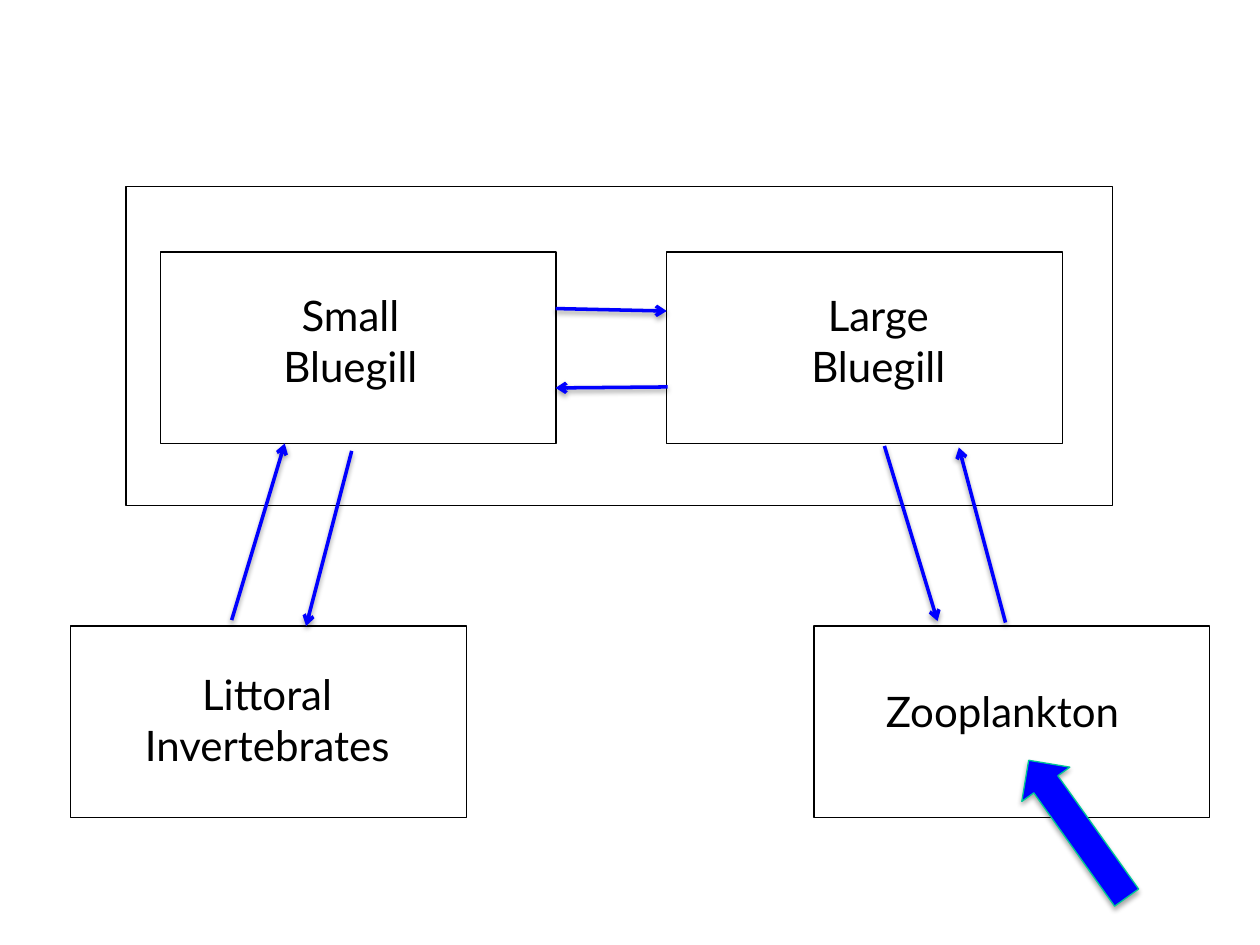
from lxml import etree
from pptx import Presentation, util as u
from pptx.dml.color import RGBColor
from pptx.enum import shapes as kinds, text as txt
from pptx.oxml.ns import qn

THEME = {
    "font": "Lato", "size": u.Pt(24), "ink": RGBColor(0, 0, 0),
    "flow": RGBColor(0, 0, 255), "edge": RGBColor(0, 200, 150),
    "thin": u.Pt(0.75), "thick": u.Pt(2),
}

# Content, in centimetres
HABITAT = (2.54, 3.76, 19.89, 6.43)
BOX_SIZE = (7.98, 3.86)
POOLS = [  # label, box corner, label frame
    ("Small Bluegill", (3.23, 5.08), (4.45, 5.72, 5.23, 2.31)),
    ("Large Bluegill", (13.44, 5.08), (15.09, 5.72, 5.23, 2.31)),
    ("Littoral Invertebrates", (1.42, 12.62), (2.11, 13.36, 6.55, 2.31)),
    ("Zooplankton", (16.41, 12.62), (17.35, 13.69, 5.72, 1.27)),
]
FLOWS = [  # from x, y, to x, y
    (11.2, 6.22, 13.44, 6.27),   # small to large
    (13.46, 7.8, 11.2, 7.82),    # large to small
    (4.67, 12.5, 5.74, 8.94),    # invertebrates to small
    (7.09, 9.09, 6.17, 12.62),   # small to invertebrates
    (17.83, 8.99, 18.9, 12.52),  # large to zooplankton
    (20.27, 12.55, 19.33, 9.02), # zooplankton to large
]
INPUT_ARROW = (21.13, 15.01, 1.19, 3.4)
INPUT_ROTATION = 324.5


def cm(lengths):
    return [u.Cm(length) for length in lengths]


def apply(target, **formats):
    for name, value in formats.items():
        setattr(target, name, value)


def outline(part, color, width):
    part.line.color.rgb = color
    part.line.width = width


def add_shadow(part, distance, opacity):
    effects = etree.SubElement(part._element.spPr, qn("a:effectLst"))
    shade = etree.SubElement(effects, qn("a:outerShdw"), blurRad=str(u.Pt(3.1)),
                             dist=str(u.Pt(distance)), dir="5400000", rotWithShape="0")
    black = etree.SubElement(shade, qn("a:srgbClr"), val="000000")
    etree.SubElement(black, qn("a:alpha"), val=str(opacity * 1000))


def add_frame(parent, place):
    frame = parent.add_shape(kinds.MSO_SHAPE.RECTANGLE, *cm(place))
    frame.shadow.inherit = False
    frame.fill.background()
    outline(frame, THEME["ink"], THEME["thin"])


def add_pool(parent, label, corner, label_place):
    pool = parent.add_group_shape().shapes
    add_frame(pool, corner + BOX_SIZE)
    caption = pool.add_textbox(*cm(label_place)).text_frame
    apply(caption, word_wrap=True, auto_size=txt.MSO_AUTO_SIZE.SHAPE_TO_FIT_TEXT)
    line = caption.paragraphs[0]
    line.alignment = txt.PP_ALIGN.CENTER
    run = line.add_run()
    run.text = label
    apply(run.font, name=THEME["font"], size=THEME["size"])
    run.font.color.rgb = THEME["ink"]


def add_flow(parent, ends):
    flow = parent.add_connector(kinds.MSO_CONNECTOR.STRAIGHT, *cm(ends))
    outline(flow, THEME["flow"], THEME["thick"])
    etree.SubElement(flow.line._get_or_add_ln(), qn("a:tailEnd"), type="arrow")
    add_shadow(flow, 1.6, 38)


def main():
    deck = Presentation()
    apply(deck, slide_width=u.Cm(25.4), slide_height=u.Cm(19.05))
    web = deck.slides.add_slide(deck.slide_layouts[6]).shapes

    # Habitat, pools and the flows between them
    add_frame(web, HABITAT)
    for pool in POOLS:
        add_pool(web, *pool)
    for ends in FLOWS:
        add_flow(web, ends)

    # Outside input to the zooplankton
    source = web.add_shape(kinds.MSO_SHAPE.UP_ARROW, *cm(INPUT_ARROW))
    source.rotation = INPUT_ROTATION
    source.fill.solid()
    source.fill.fore_color.rgb = THEME["flow"]
    outline(source, THEME["edge"], THEME["thin"])
    add_shadow(source, 1.8, 35)

    deck.save("out.pptx")


if __name__ == "__main__":
    main()
